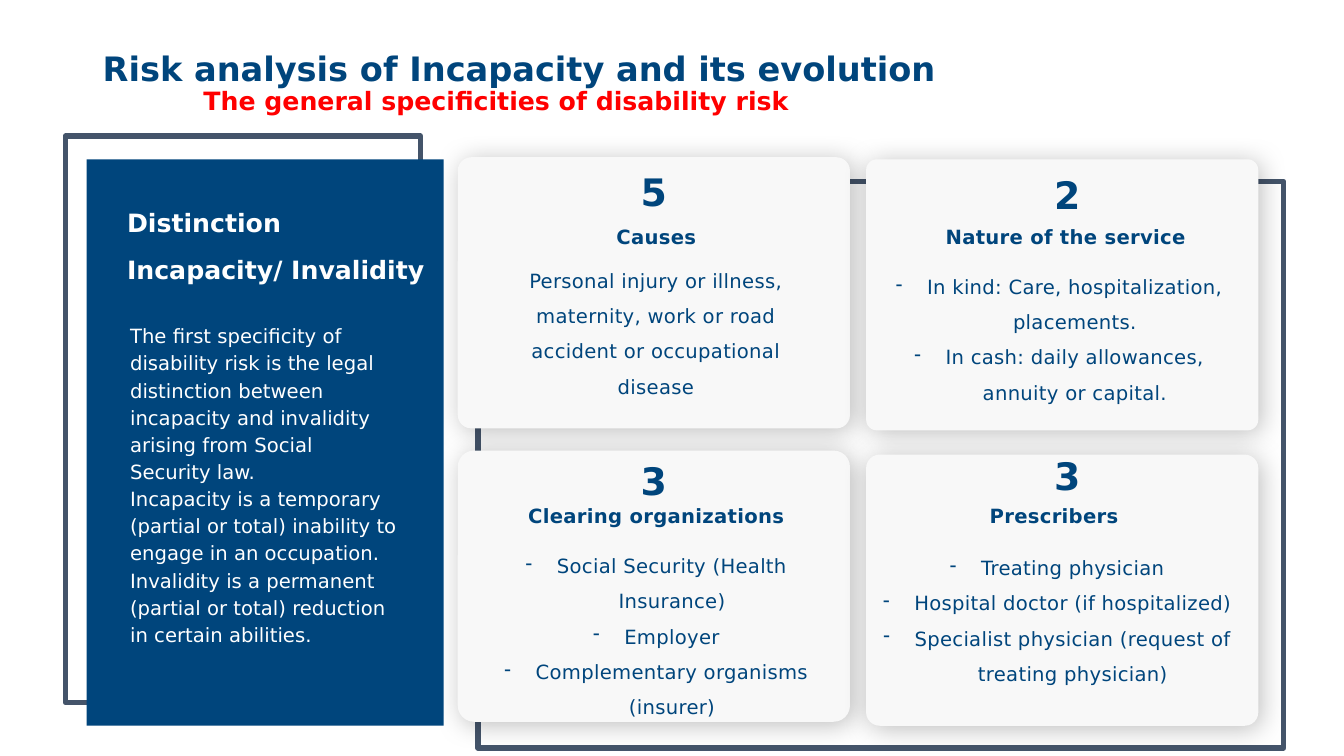
from lxml import etree
from pptx import Presentation
from pptx.dml.color import RGBColor
from pptx.enum.shapes import MSO_SHAPE
from pptx.enum.text import MSO_ANCHOR, MSO_AUTO_SIZE, PP_ALIGN
from pptx.oxml.ns import qn
from pptx.util import Emu, Pt

PX = 9144  # 100 px to the inch
FONT = "DejaVu Sans"
NAVY = RGBColor(0x00, 0x45, 0x7C)
SLATE = RGBColor(0x44, 0x54, 0x6A)
RED = RGBColor(0xFF, 0x00, 0x00)
PALE = RGBColor(0xF8, 0xF8, 0xF8)
WHITE = RGBColor(0xFF, 0xFF, 0xFF)
RECTANGLE, ROUNDED = MSO_SHAPE.RECTANGLE, MSO_SHAPE.ROUNDED_RECTANGLE
TOP, MIDDLE = MSO_ANCHOR.TOP, MSO_ANCHOR.MIDDLE
LEFT, CENTER = PP_ALIGN.LEFT, PP_ALIGN.CENTER
GROW, FIXED = MSO_AUTO_SIZE.SHAPE_TO_FIT_TEXT, MSO_AUTO_SIZE.NONE
HANGING = 31


def px(*lengths):
    return [Emu(length * PX) for length in lengths]


class SlideBuilder:
    def __init__(self, slide):
        self.slide = slide

    def shape(self, box, kind=RECTANGLE, fill=None, line=None):
        shape = self.slide.shapes.add_shape(kind, *px(*box))
        shape.shadow.inherit = False
        if fill is None:
            shape.fill.background()
        else:
            shape.fill.solid()
            shape.fill.fore_color.rgb = fill
        if line is None:
            shape.line.fill.background()
        else:
            shape.line.color.rgb = line
            shape.line.width = Pt(4)
        return shape

    def card(self, box, rounding):
        shape = self.shape(box, ROUNDED, PALE)
        shape.adjustments[0] = rounding
        effects = shape._element.spPr.find(qn("a:effectLst"))
        shadow = etree.SubElement(
            effects, qn("a:outerShdw"), blurRad=str(Pt(19)), dist=str(Pt(3)),
            dir="2700000", algn="tl", rotWithShape="0")
        color = etree.SubElement(shadow, qn("a:srgbClr"), val="000000")
        etree.SubElement(color, qn("a:alpha"), val="26000")

    def text_frame(self, box, anchor=TOP, margins=(10, 5), auto_size=GROW):
        frame = self.slide.shapes.add_textbox(*px(*box)).text_frame
        frame.word_wrap = True
        frame.auto_size = auto_size
        frame.vertical_anchor = anchor
        side, end = px(*margins)
        frame.margin_left = frame.margin_right = side
        frame.margin_top = frame.margin_bottom = end
        return frame

    def paragraph(self, frame, text, size, color, bold=False, align=LEFT,
                  line_spacing=None, spacing=0, indent=0, bullet=False):
        first = frame.paragraphs[0]
        paragraph = frame.add_paragraph() if first.runs else first
        paragraph.alignment = align
        if line_spacing:
            paragraph.line_spacing = line_spacing
        properties = paragraph._p.get_or_add_pPr()
        if indent:
            properties.set("marL", str(indent * PX))
        if bullet:
            properties.set("marL", str(HANGING * PX))
            properties.set("indent", str(-HANGING * PX))
            etree.SubElement(properties, qn("a:buChar"), char="-")
        run = paragraph.add_run()
        run.text = text
        run.font.name = FONT
        run.font.size = Pt(size)
        run.font.bold = bold
        run.font.color.rgb = color
        if spacing:
            run.font._element.set("spc", str(spacing))

    def card_text(self, box, lines, size=14, anchor=TOP, **style):
        frame = self.text_frame(box, anchor)
        for line in lines:
            self.paragraph(frame, line, size, NAVY, align=CENTER, spacing=20, **style)


# Each card: box, rounding, number box, heading box, body box, texts
CARDS = [
    ((454, 156, 389, 269), 0.05, (538, 162, 221, 56), "5",
     (474, 218, 354, 34), "Causes", (483, 250, 335, 152), False,
     ["Personal injury or illness, maternity, work or road accident or occupational disease"]),
    ((859, 158, 389, 269), 0.04, (948, 165, 221, 56), "2",
     (886, 218, 342, 34), "Nature of the service", (873, 256, 355, 152), True,
     ["In kind: Care, hospitalization, placements.",
      "In cash: daily allowances, annuity or capital."]),
    ((454, 447, 389, 269), 0.06, (538, 449, 221, 56), "3",
     (483, 495, 336, 34), "Clearing organizations", (474, 533, 354, 187), True,
     ["Social Security (Health Insurance)", "Employer",
      "Complementary organisms (insurer)"]),
    ((859, 451, 389, 269), 0.05, (948, 444, 221, 56), "3",
     (905, 495, 281, 35), "Prescribers", (856, 535, 385, 152), True,
     ["Treating physician", "Hospital doctor (if hospitalized)",
      "Specialist physician (request of treating physician)"]),
]
DEFINITIONS = [
    "The first specificity of disability risk is the legal distinction between "
    "incapacity and invalidity arising from Social Security law.",
    "Incapacity is a temporary (partial or total) inability to engage in an occupation. "
    "Invalidity is a permanent (partial or total) reduction in certain abilities.",
]


def main():
    presentation = Presentation()
    presentation.slide_width, presentation.slide_height = px(1333, 750)
    builder = SlideBuilder(presentation.slides.add_slide(presentation.slide_layouts[6]))

    # Title and subtitle
    title = builder.text_frame((92, 40, 1150, 88), MIDDLE, auto_size=FIXED)
    builder.paragraph(title, "Risk analysis of Incapacity and its evolution", 24, NAVY,
                      bold=True, line_spacing=0.9)
    builder.paragraph(title, "The general specificities of disability risk", 18, RED,
                      bold=True, line_spacing=0.9, indent=100)

    # Frame behind the cards, then the cards
    builder.shape((474, 180, 799, 562), line=SLATE)
    for box, rounding, *_ in CARDS:
        builder.card(box, rounding)

    # Left panel with its frame
    builder.shape((65, 135, 352, 562), line=SLATE)
    builder.shape((86, 158, 354, 562), fill=NAVY)
    heading = builder.text_frame((126, 164, 298, 143), MIDDLE, (0, 0))
    builder.paragraph(heading, "Distinction Incapacity/ Invalidity", 18, WHITE,
                      bold=True, line_spacing=Pt(33.8))
    body = builder.text_frame((129, 318, 265, 344), margins=(0, 0))
    for definition in DEFINITIONS:
        builder.paragraph(body, definition, 14, WHITE, line_spacing=Pt(19.4))

    # Card texts
    for _, _, number_box, number, heading_box, name, body_box, bullet, lines in CARDS:
        builder.card_text(number_box, [number], 27, MIDDLE, bold=True)
        builder.card_text(heading_box, [name], bold=True)
        builder.card_text(body_box, lines, line_spacing=1.5, bullet=bullet)

    presentation.save("out.pptx")


if __name__ == "__main__":
    main()
